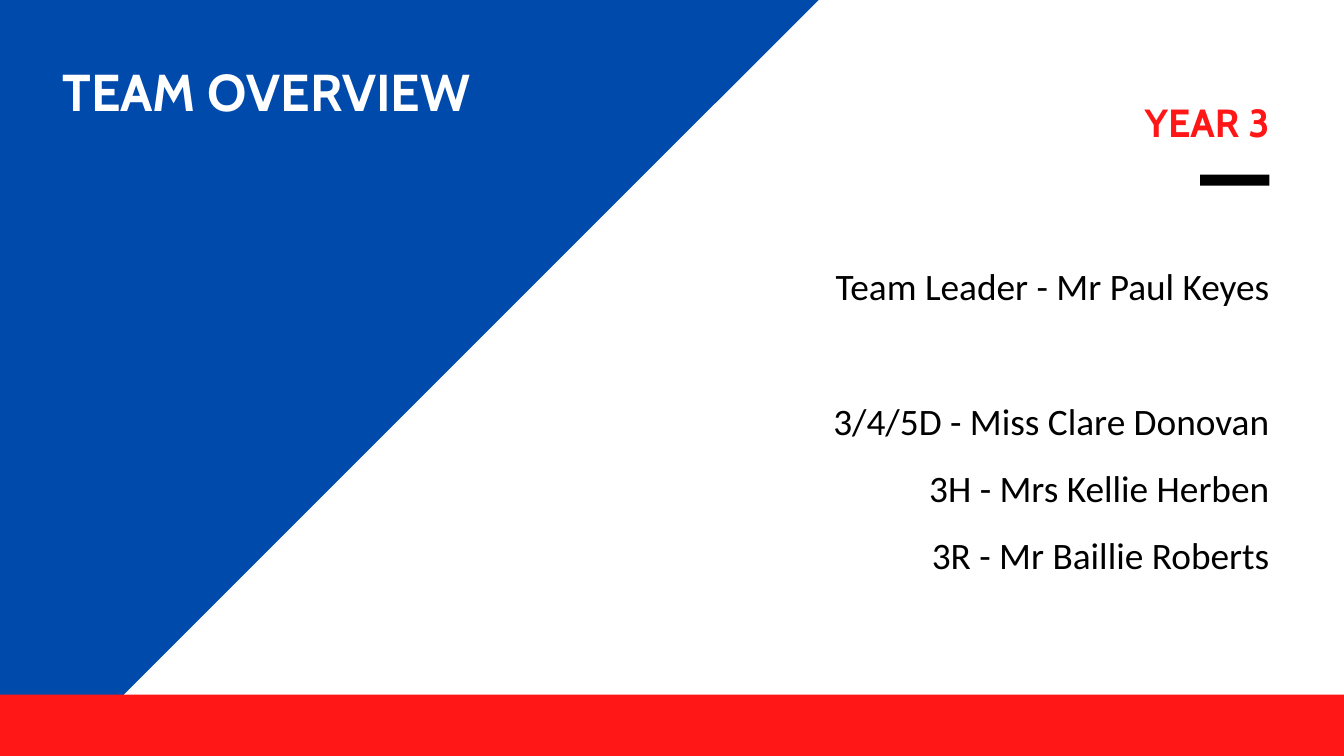
from pptx import Presentation
from pptx.dml.color import RGBColor
from pptx.enum.shapes import MSO_SHAPE
from pptx.enum.text import MSO_ANCHOR, PP_ALIGN
from pptx.util import Cm, Pt

WIDTH, HEIGHT = 50.8, 28.58
RIGHT = 47.98  # shared right edge of the text column
BAND_H = 2.32

COLORS = {"blue": "004AAC", "red": "FF1616", "black": "000000", "white": "FFFFFF"}
STYLES = {
    "title": {"name": "Cabin", "size": Pt(55.5), "bold": True},
    "heading": {"name": "Cabin", "size": Pt(42), "bold": True},
    "body": {"name": "Calibri", "size": Pt(40), "bold": False},
}


class SlideBuilder:
    """Holds the style and the current slide."""

    def __init__(self, prs, colors, styles):
        self.colors, self.styles = colors, styles
        self.slide = prs.slides.add_slide(prs.slide_layouts[6])

    def color(self, name):
        return RGBColor.from_string(self.colors[name])

    def paint(self, sp, color):
        sp.shadow.inherit = False
        sp.fill.solid()
        sp.fill.fore_color.rgb = self.color(color)
        sp.line.fill.background()

    def rect(self, x, y, w, h, color):
        sp = self.slide.shapes.add_shape(
            MSO_SHAPE.RECTANGLE, Cm(x), Cm(y), Cm(w), Cm(h))
        self.paint(sp, color)

    def polygon(self, points, color):
        start, *rest = [(Cm(x), Cm(y)) for x, y in points]
        builder = self.slide.shapes.build_freeform(*start)
        builder.add_line_segments(rest, close=True)
        self.paint(builder.convert_to_shape(), color)

    def text(self, x, y, w, h, lines, style, color, align, spacing,
             left=0, top=0, gap_after_first=0):
        tf = self.slide.shapes.add_textbox(Cm(x), Cm(y), Cm(w), Cm(h)).text_frame
        frame = {"word_wrap": True, "vertical_anchor": MSO_ANCHOR.TOP,
                 "margin_left": Cm(left), "margin_top": Cm(top),
                 "margin_right": 0, "margin_bottom": 0}
        for key, value in frame.items():
            setattr(tf, key, value)
        for i, line in enumerate(lines):
            p = tf.add_paragraph() if i else tf.paragraphs[0]
            p.alignment, p.line_spacing = align, spacing
            p.space_after = Pt(0 if i else gap_after_first)
            r = p.add_run()
            r.text = line
            for key, value in self.styles[style].items():
                setattr(r.font, key, value)
            r.font.color.rgb = self.color(color)


def main():
    prs = Presentation()
    prs.slide_width, prs.slide_height = Cm(WIDTH), Cm(HEIGHT)
    s = SlideBuilder(prs, COLORS, STYLES)

    # Team list, with a gap of one line after the leader
    team = ["Team Leader - Mr Paul Keyes", "3/4/5D - Miss Clare Donovan",
            "3H - Mrs Kellie Herben", "3R - Mr Baillie Roberts"]
    s.text(RIGHT - 22.81, 9.09, 22.81, 14.58, team, "body", "black",
           PP_ALIGN.RIGHT, 1.5, top=0.03, gap_after_first=72)

    # Year heading and its short bar
    s.rect(RIGHT - 2.62, 6.6, 2.62, 0.42, "black")
    s.text(RIGHT - 15.67, 3.35, 15.67, 2.08, ["YEAR 3"], "heading", "red",
           PP_ALIGN.RIGHT, 1.04, top=0.28)

    # Blue panel with a diagonal edge, and the title on it
    s.polygon([(30.94, 0), (2.36, HEIGHT), (0, HEIGHT), (0, 0)], "blue")
    s.text(2.21, 1.75, 17.27, 5.26, ["TEAM OVERVIEW"], "title", "white",
           PP_ALIGN.LEFT, 1.09, left=0.15, top=0.3)

    # Bottom band
    s.rect(0, HEIGHT - BAND_H, WIDTH, BAND_H, "red")

    prs.save("out.pptx")


if __name__ == "__main__":
    main()
